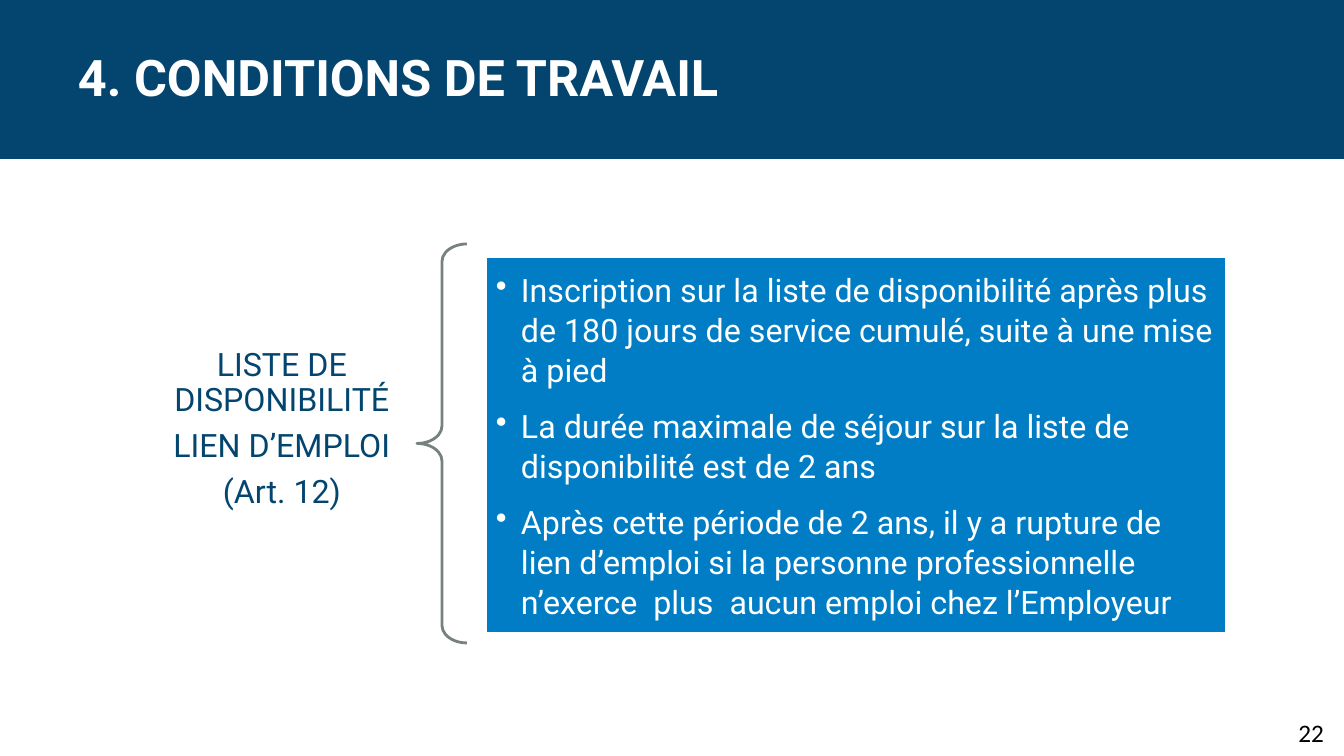
from dataclasses import dataclass

import pptx
import pptx.dml.color
import pptx.enum.shapes
import pptx.enum.text
import pptx.oxml.ns
import pptx.util
from lxml import etree

EMU_PER_PX = 914400 / 100.8
SHAPE = pptx.enum.shapes.MSO_SHAPE
ALIGN = pptx.enum.text.PP_ALIGN


@dataclass(frozen=True)
class Theme:
    navy: str = "04456F"
    blue: str = "007DC5"
    grey: str = "76827B"
    white: str = "FFFFFF"
    black: str = "000000"
    font: str = "Roboto"
    number_font: str = "Calibri"
    title_size: int = 36
    body_size: int = 23
    number_size: int = 18
    line_width: int = 2


THEME = Theme()

TOPIC = ["LISTE DE DISPONIBILITÉ", "LIEN D’EMPLOI", "(Art. 12)"]
RULES = [
    "Inscription sur la liste de disponibilité après plus de 180 jours "
    "de service cumulé, suite à une mise à pied",
    "La durée maximale de séjour sur la liste de disponibilité est de 2 ans",
    "Après cette période de 2 ans, il y a rupture de lien d’emploi si la "
    "personne professionnelle n’exerce  plus  aucun emploi chez l’Employeur",
]


def px(n):
    return round(n * EMU_PER_PX)


def rgb(color):
    return pptx.dml.color.RGBColor.from_string(color)


def add_shape(s, kind, box, fill=None, line=None):
    sp = s.shapes.add_shape(kind, *map(px, box))
    sp.shadow.inherit = False
    if fill:
        sp.fill.solid()
        sp.fill.fore_color.rgb = rgb(fill)
    else:
        sp.fill.background()
    if line:
        sp.line.color.rgb = rgb(line)
        sp.line.width = pptx.util.Pt(THEME.line_width)
    else:
        sp.line.fill.background()
    return sp


def add_bullet(p, indent):
    pPr = p._p.get_or_add_pPr()
    pPr.set("marL", str(px(indent)))
    pPr.set("indent", str(-px(indent)))
    etree.SubElement(pPr, pptx.oxml.ns.qn("a:buChar")).set("char", "•")


def write_text(sp, lines, size, color, font=THEME.font, bold=False,
               margins=(10, 5), bullet_indent=0, **paragraph_format):
    """Fill a shape's text frame, one paragraph per line; margins are (x, y) in px."""
    tf = sp.text_frame
    tf.word_wrap = True
    tf.vertical_anchor = pptx.enum.text.MSO_ANCHOR.MIDDLE
    tf.margin_left = tf.margin_right = px(margins[0])
    tf.margin_top = tf.margin_bottom = px(margins[1])
    font_format = {"size": pptx.util.Pt(size), "name": font, "bold": bold}
    for i, line in enumerate(lines):
        p = tf.add_paragraph() if i else tf.paragraphs[0]
        for name, value in paragraph_format.items():
            setattr(p, name, value)
        if bullet_indent:
            add_bullet(p, bullet_indent)
        r = p.add_run()
        r.text = line
        for name, value in font_format.items():
            setattr(r.font, name, value)
        r.font.color.rgb = rgb(color)


def add_text(s, box, lines, size, color, **text_format):
    sp = s.shapes.add_textbox(*map(px, box))
    write_text(sp, lines, size, color, **text_format)


def main():
    prs = pptx.Presentation()
    prs.slide_width, prs.slide_height = px(1344), px(756)
    s = prs.slides.add_slide(prs.slide_layouts[6])

    add_shape(s, SHAPE.RECTANGLE, (0, 0, 1344, 159), fill=THEME.navy)
    add_text(s, (1021, 712, 313, 40), ["22"], THEME.number_size, THEME.black,
             font=THEME.number_font, alignment=ALIGN.RIGHT)
    add_text(s, (124, 341, 316, 177), TOPIC, THEME.body_size, THEME.navy,
             margins=(18, 6), alignment=ALIGN.CENTER, line_spacing=0.9,
             space_after=pptx.util.Pt(8))

    brace = add_shape(s, SHAPE.LEFT_BRACE, (417, 244, 50, 399), line=THEME.grey)
    brace.adjustments[0] = 0.35

    panel = add_shape(s, SHAPE.RECTANGLE, (486, 257, 740, 376),
                      fill=THEME.blue, line=THEME.white)
    write_text(panel, RULES, THEME.body_size, THEME.white, margins=(10, 10),
               bullet_indent=25, alignment=ALIGN.LEFT, line_spacing=1.03,
               space_after=pptx.util.Pt(12))

    add_text(s, (68, 13, 1210, 126), ["4. CONDITIONS DE TRAVAIL"],
             THEME.title_size, THEME.white, bold=True)

    prs.save("out.pptx")


if __name__ == "__main__":
    main()
